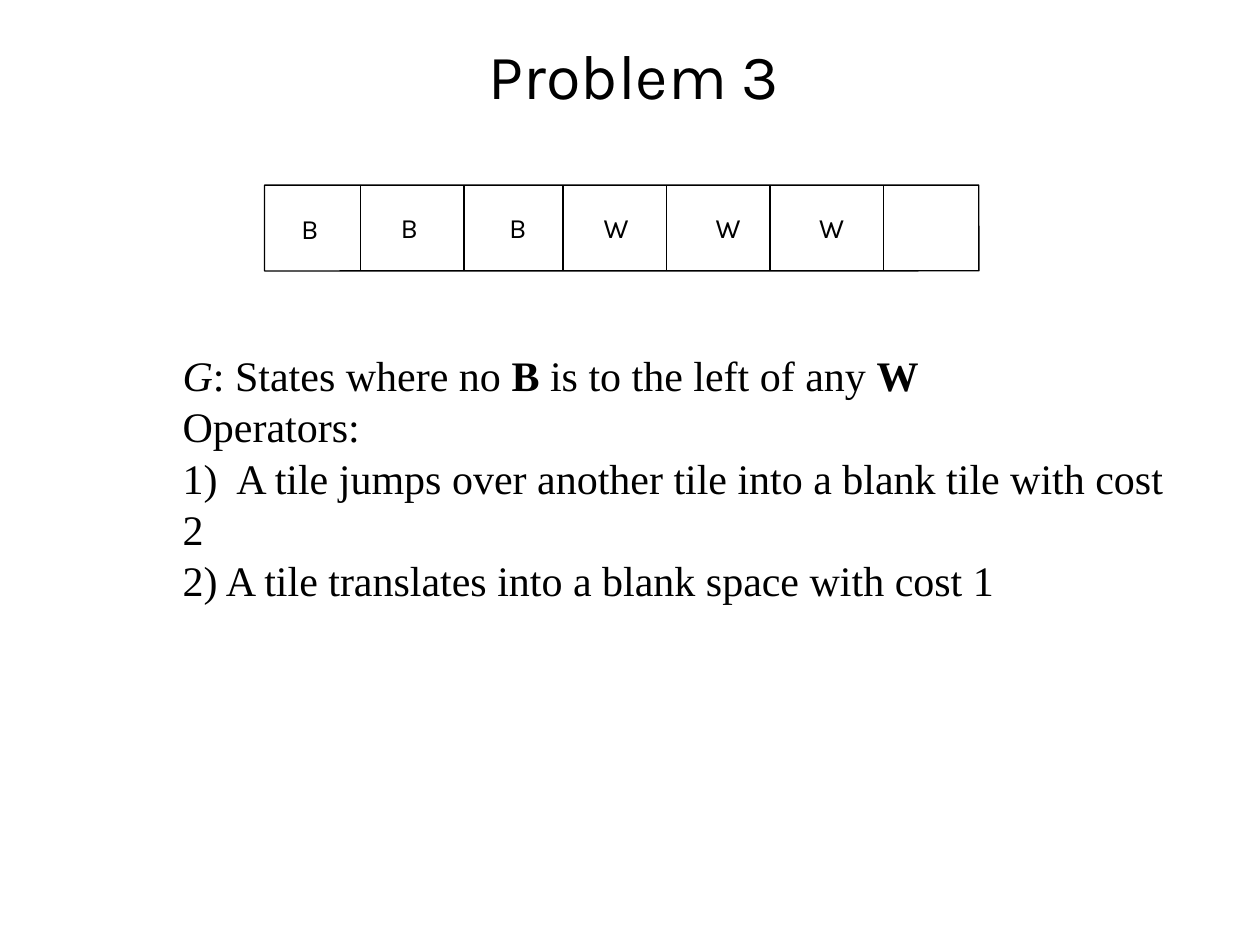
from lxml.etree import SubElement
from pptx import Presentation
from pptx.dml.color import RGBColor
from pptx.enum.shapes import MSO_CONNECTOR, MSO_SHAPE
from pptx.enum.text import MSO_AUTO_SIZE
from pptx.oxml.ns import qn
from pptx.util import Pt

COLORS = {"ink": "000000"}
INK = RGBColor.from_string(COLORS["ink"])

TITLE = [[("Problem 3", {})]]
RULES = [
    [("G", {"italic": True}), (": States where no ", {}), ("B", {"bold": True}),
     (" is to the left of any ", {}), ("W", {"bold": True})],
    [("Operators:", {})],
    [("1)  A tile jumps over another tile into a blank tile with cost 2", {})],
    [("2) A tile translates into a blank space with cost 1", {})],
]
# Each tile: letter, left and top of its box
TILES = [("B", 165.6, 117.4), ("B", 222.5, 116.6), ("B", 284.4, 116.6),
         ("W", 338.4, 116.6), ("W", 402.5, 116.6), ("W", 461.5, 116.6)]
SPLITS = [206, 265.2, 321.8, 380.9, 440, 504.7]
BOARD = (151.2, 105.8, 408.2, 49)

HEAD = {"name": "Karla", "size": Pt(36)}
MARK = {"name": "Karla", "size": Pt(16)}
BODY = {"name": "Times New Roman", "size": Pt(24)}
INSETS = {"margin_left": Pt(6.5), "margin_right": Pt(6.5),
          "margin_top": Pt(3.2), "margin_bottom": Pt(3.2),
          "word_wrap": True, "auto_size": MSO_AUTO_SIZE.SHAPE_TO_FIT_TEXT}


def assign(item, values):
    for key, value in values.items():
        setattr(item, key, value)


def add_text(slide, place, paras, style):
    frame = slide.shapes.add_textbox(*map(Pt, place)).text_frame
    assign(frame, INSETS)
    for i, runs in enumerate(paras):
        para = frame.add_paragraph() if i else frame.paragraphs[0]
        para.line_spacing = 1.02
        for text, extra in runs:
            run = para.add_run()
            run.text = text
            assign(run.font, {**style, **extra})
            run.font.color.rgb = INK


def ink_line(line):
    line.color.rgb = INK
    line.width = Pt(0.75)


def add_board(slide):
    left, top, width, height = BOARD
    board = slide.shapes.add_shape(MSO_SHAPE.ROUNDED_RECTANGLE, *map(Pt, BOARD))
    board.adjustments[0] = 0.002
    board.shadow.inherit = False
    board.fill.background()
    ink_line(board.line)
    for x in SPLITS:
        split = slide.shapes.add_connector(
            MSO_CONNECTOR.STRAIGHT, Pt(x), Pt(top), Pt(x), Pt(top + height))
        ink_line(split.line)
        SubElement(split._element.spPr, qn("a:effectLst"))


def main():
    deck = Presentation()
    assign(deck, {"slide_width": Pt(720), "slide_height": Pt(540)})
    slide = deck.slides.add_slide(deck.slide_layouts[6])
    add_text(slide, (272.9, 16.6, 179.6, 51), TITLE, HEAD)
    add_board(slide)
    for letter, left, top in TILES:
        add_text(slide, (left, top, 32.4, 26.6), [[(letter, {})]], MARK)
    add_text(slide, (97.9, 195.8, 587.5, 150.5), RULES, BODY)
    deck.save("out.pptx")


if __name__ == "__main__":
    main()
